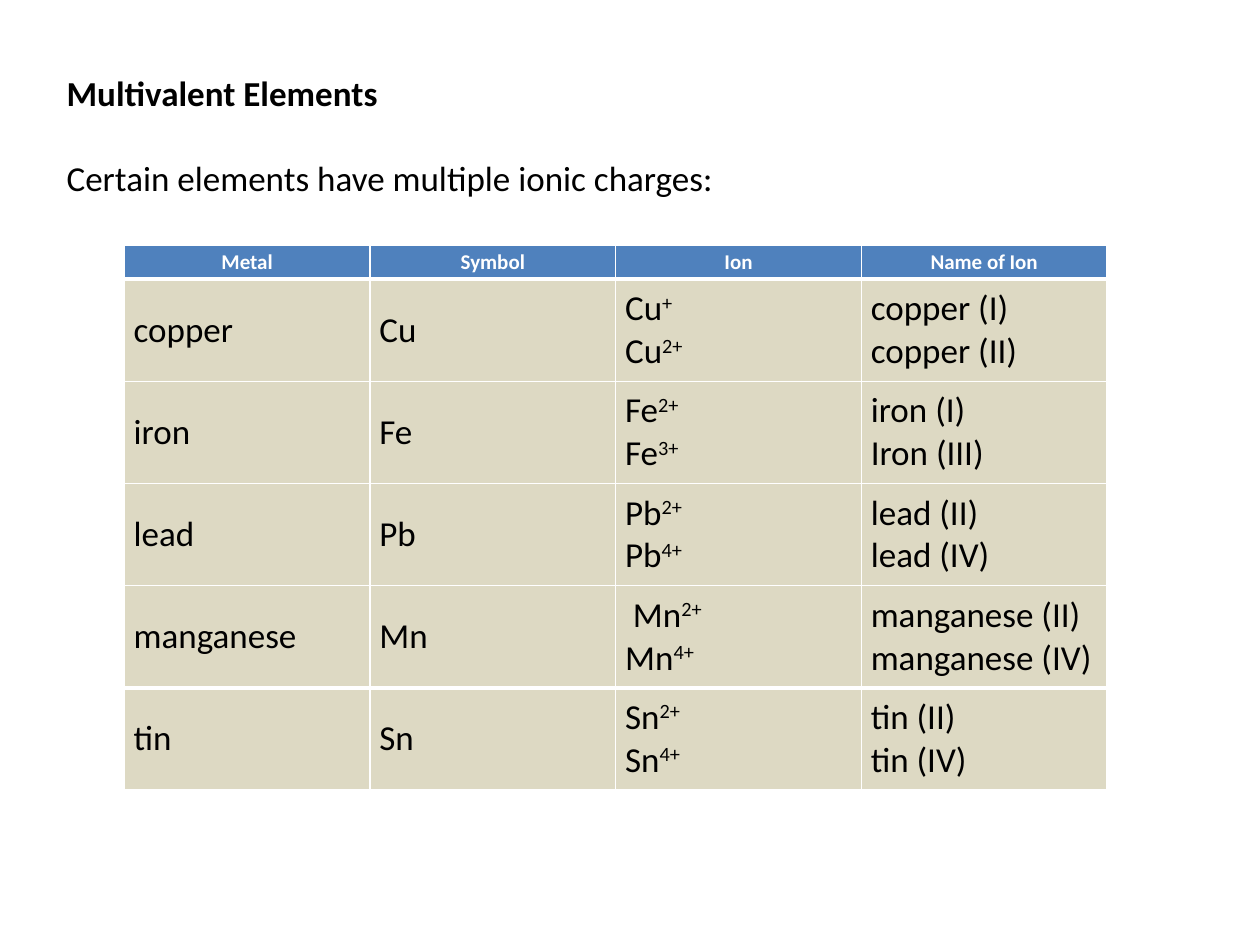
"""Build a slide on multivalent elements with a table of their ions."""
from dataclasses import dataclass

from lxml import etree
from pptx import Presentation
from pptx import util as u
from pptx.dml.color import RGBColor
from pptx.enum import text as t
from pptx.oxml.ns import qn


@dataclass(frozen=True)
class Theme:
    font: str = "Calibri"
    ink: str = "000000"
    white: str = "FFFFFF"
    header_fill: str = "4F81BD"
    body_fill: str = "DDD9C3"
    body_size: float = 20
    header_size: float = 12
    thin: float = 1
    thick: float = 3


HEADINGS = ("Metal", "Symbol", "Ion", "Name of Ion")
METALS = (
    ("copper", "Cu", "Cu^+\nCu^2+", "copper (I)\ncopper (II)"),
    ("iron", "Fe", "Fe^2+\nFe^3+", "iron (I)\nIron (III)"),
    ("lead", "Pb", "Pb^2+\nPb^4+", "lead (II)\nlead (IV)"),
    ("manganese", "Mn", " Mn^2+\nMn^4+", "manganese (II)\nmanganese (IV)"),
    ("tin", "Sn", "Sn^2+\nSn^4+", "tin (II)\ntin (IV)"),
)


def write(paragraph, content, *, font, size, color, bold=False, align=t.PP_ALIGN.LEFT, before=0):
    """Write text into a paragraph, raising whatever follows a caret."""
    paragraph.alignment = align
    if before:
        paragraph.space_before = u.Pt(before)
    base, _, charge = content.partition("^")
    for part, raised in ((base, False), (charge, True)):
        if not part:
            continue
        run = paragraph.add_run()
        run.text = part
        run.font.name = font
        run.font.size = u.Pt(size)
        run.font.bold = bold
        run.font.color.rgb = RGBColor.from_string(color)
        if raised:
            run.font._element.set("baseline", "30000")


class SlideBuilder:
    """Hold the theme and the current slide, and add elements to it."""

    def __init__(self, slide, theme):
        self.slide = slide
        self.theme = theme

    def intro(self, title, sentence, left, top, width, height):
        """Add the title with its sentence one line further down."""
        frame = self.slide.shapes.add_textbox(*map(u.Pt, (left, top, width, height))).text_frame
        frame.word_wrap = True
        style = dict(font=self.theme.font, size=self.theme.body_size, color=self.theme.ink)
        write(frame.paragraphs[0], title, bold=True, **style)
        write(frame.add_paragraph(), sentence, before=24.4, **style)

    def borders(self, cell, top, bottom):
        """Draw white lines on the four sides of a cell."""
        properties = cell._tc.get_or_add_tcPr()
        thin = self.theme.thin
        for side, width in (("L", thin), ("R", thin), ("T", top), ("B", bottom)):
            line = etree.SubElement(properties, qn(f"a:ln{side}"), w=str(u.Pt(width)))
            fill = etree.SubElement(line, qn("a:solidFill"))
            etree.SubElement(fill, qn("a:srgbClr"), val=self.theme.white)

    def cell(self, cell, content, fill, **style):
        """Fill a cell and write one paragraph for each line of its content."""
        cell.margin_left = cell.margin_right = u.Pt(5.4)
        cell.margin_top = cell.margin_bottom = 0
        cell.vertical_anchor = t.MSO_ANCHOR.MIDDLE
        cell.fill.solid()
        cell.fill.fore_color.rgb = RGBColor.from_string(fill)
        frame = cell.text_frame
        for index, line in enumerate(content.split("\n")):
            paragraph = frame.add_paragraph() if index else frame.paragraphs[0]
            write(paragraph, line, font=self.theme.font, **style)

    def table(self, headings, records, left, top, column_width, header_height, row_height):
        """Add a table with a heading row and heavy lines at both ends of its body."""
        theme = self.theme
        rows = (headings, *records)
        width = column_width * len(headings)
        height = header_height + row_height * len(records)
        table = self.slide.shapes.add_table(
            len(rows), len(headings), *map(u.Pt, (left, top, width, height))).table
        for column in table.columns:
            column.width = u.Pt(column_width)
        header = dict(fill=theme.header_fill, size=theme.header_size, color=theme.white,
                      bold=True, align=t.PP_ALIGN.CENTER)
        body = dict(fill=theme.body_fill, size=theme.body_size, color=theme.ink)
        heavy = {1, len(rows) - 1}
        for r, row in enumerate(rows):
            table.rows[r].height = u.Pt(row_height if r else header_height)
            above, below = (theme.thick if edge in heavy else theme.thin for edge in (r, r + 1))
            for c, content in enumerate(row):
                self.borders(table.cell(r, c), above, below)
                self.cell(table.cell(r, c), content, **(body if r else header))


def main():
    """Build and save the slide."""
    deck = Presentation()
    deck.slide_width, deck.slide_height = u.Pt(720), u.Pt(540)
    builder = SlideBuilder(deck.slides.add_slide(deck.slide_layouts[6]), Theme())
    builder.intro("Multivalent Elements", "Certain elements have multiple ionic charges:",
                  left=31, top=37.5, width=388, height=101.5)
    builder.table(HEADINGS, METALS, left=71, top=140, column_width=140.4,
                  header_height=19.5, row_height=58.4)
    deck.save("out.pptx")


if __name__ == "__main__":
    main()
